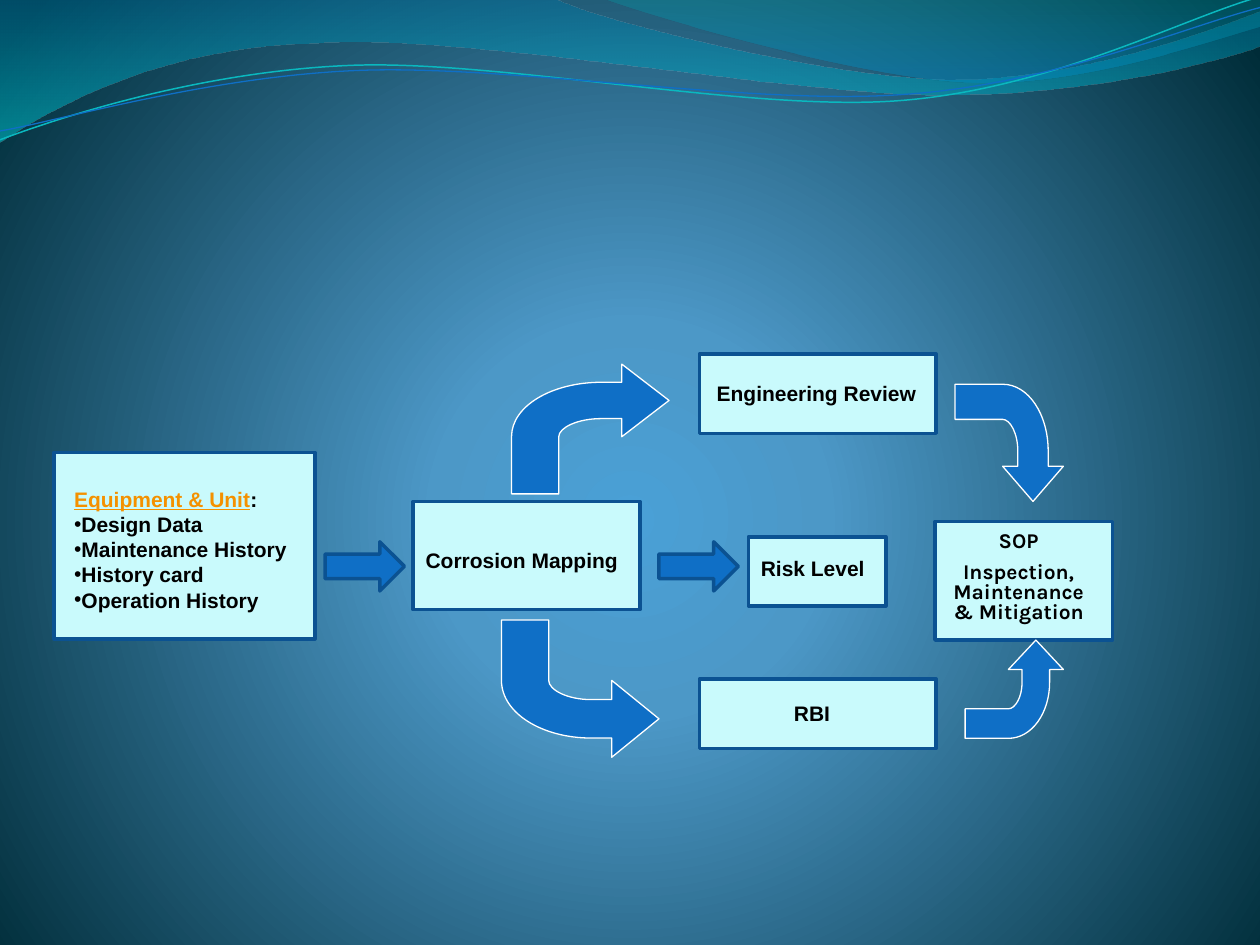
from lxml import etree
from pptx import Presentation
from pptx.dml.color import RGBColor
from pptx.enum.shapes import MSO_SHAPE as SHAPE
from pptx.enum.text import MSO_AUTO_SIZE, PP_ALIGN as ALIGN
from pptx.oxml import parse_xml
from pptx.oxml.ns import nsdecls, qn
from pptx.util import Inches, Pt

BLUE = RGBColor(0x0F, 0x6F, 0xC6)
NAVY = RGBColor(0x0B, 0x52, 0x92)
PALE = RGBColor(0xC9, 0xFA, 0xFC)
TEAL = RGBColor(0x0A, 0xB8, 0xBF)
ORANGE = RGBColor(0xF4, 0x91, 0x00)
BLACK = RGBColor(0, 0, 0)
WHITE = RGBColor(255, 255, 255)

# Gradient stops: position %, colour, opacity %
BACKDROP = [(0, "4AA0D6", 100), (25, "4C98C7", 100), (100, "002C38", 100)]
CENTRE = ('<a:path path="circle"><a:fillToRect l="10000" t="110000" '
          'r="10000" b="100000"/></a:path>')
DOWNWARD = '<a:lin ang="5400000" scaled="1"/>'

# Outlines: a start point, then lines (one point) and curves (three points)
WAVES = [
    ([[(0, 0)], [(4.4, -0.01)], [(4.76, 0.17), (6.64, 0.63), (7.58, 0.63)],
      [(8.53, 0.63), (9.58, 0.26), (10, 0.09)], [(10.01, 0.36)],
      [(9.83, 0.44), (8.7, 0.76), (7.46, 0.75)],
      [(6.22, 0.75), (3.82, 0.28), (2.57, 0.34)],
      [(1.29, 0.36), (0.46, 0.83), (-0.01, 1.13)]],
     [(0, "0074A1", 45), (100, "00C6CF", 55)]),
    ([[(4.79, -0.01)], [(5.09, 0.11), (6.82, 0.62), (7.69, 0.65)],
      [(8.56, 0.69), (9.61, 0.32), (10, 0.21)], [(10, 0)]],
     [(0, "00A1A9", 30), (80, "008BBF", 45)]),
]
RIPPLES = [
    ([[(0, 1.11)], [(0.48, 0.93), (1.58, 0.57), (2.77, 0.52)],
      [(3.95, 0.47), (5.93, 0.89), (7.13, 0.8)],
      [(8.33, 0.71), (9.38, 0.15), (9.98, -0.02)]], TEAL, 0.85),
    ([[(0, 1.04)], [(0.47, 0.96), (1.64, 0.61), (2.83, 0.56)],
      [(4.03, 0.51), (5.97, 0.84), (7.17, 0.75)],
      [(8.36, 0.67), (9.41, 0.21), (10, 0.06)]], BLUE, 0.75),
]
# Bent arrow in a unit square: (along the head's direction, across it)
BENT = [[(1, .72)], [(.7, 1)], [(.7, .86)], [(.57, .86)],
        [(.26, .86), (0, .68), (0, .44)], [(0, 0)], [(.3, 0)], [(.3, .44)],
        [(.3, .51), (.42, .58), (.57, .58)], [(.7, .58)], [(.7, .44)]]
# Start and end in x, start and end in y, and whether the head is vertical
BENT_ARROWS = [
    (7.66, 8.44, 5.86, 5.08, True),
    (3.98, 5.23, 4.92, 6.01, False),
    (4.06, 5.31, 3.92, 2.89, False),
    (7.58, 8.44, 3.05, 3.98, True),
]
BOXES = [
    (0.43, 3.59, 2.07, 1.48), (3.28, 3.98, 1.8, 0.86), (5.55, 2.81, 1.88, 0.63),
    (5.94, 4.26, 1.09, 0.55), (5.55, 5.39, 1.88, 0.55), (7.42, 4.14, 1.41, 0.94),
]
ARROWS = [(2.58, 4.3, 0.63, 0.39), (5.23, 4.3, 0.63, 0.39)]
INPUTS = ["Equipment & Unit:", "Design Data", "Maintenance History",
          "History card", "Operation History"]
LABELS = [
    ((0.49, 3.81, 1.95, 1.11), INPUTS, "Arial", ALIGN.LEFT),
    ((3.28, 4.3, 1.8, 0.3), ["Corrosion Mapping"], "Arial", ALIGN.LEFT),
    ((5.59, 2.97, 1.8, 0.3), ["Engineering Review"], "Arial", ALIGN.LEFT),
    ((5.94, 4.36, 1.09, 0.31), ["Risk Level"], "Arial", ALIGN.LEFT),
    ((5.86, 5.51, 1.17, 0.3), ["RBI"], "Arial", ALIGN.CENTER),
    ((7.42, 4.14, 1.33, 0.89), ["SOP", "Inspection, Maintenance & Mitigation"],
     "Karla", ALIGN.CENTER),
]


def set_gradient(fill, parent, stops, direction):
    gs = "".join(
        f'<a:gs pos="{pos * 1000}"><a:srgbClr val="{color}">'
        f'<a:alpha val="{alpha * 1000}"/></a:srgbClr></a:gs>'
        for pos, color, alpha in stops)
    fill.solid()
    parent.replace(parent.find(qn("a:solidFill")), parse_xml(
        f'<a:gradFill {nsdecls("a")} rotWithShape="1">'
        f'<a:gsLst>{gs}</a:gsLst>{direction}</a:gradFill>'))


def add_outline(s, outline, close=True):
    """Draw every point as a line, then join each group of three as a curve."""
    pts = [(Inches(x), Inches(y)) for seg in outline for x, y in seg]
    builder = s.shapes.build_freeform(*pts[0], scale=1.0)
    builder.add_line_segments(pts[1:], close=close)
    sp = builder.convert_to_shape()
    sp.shadow.inherit = False
    lines = iter(list(sp.element.iter(qn("a:lnTo"))))
    for seg in outline[1:]:
        first, *rest = [next(lines) for _ in seg]
        if rest:
            curve = etree.Element(qn("a:cubicBezTo"))
            first.addprevious(curve)
            for line in (first, *rest):
                curve.append(line[0])
                line.getparent().remove(line)
    return sp


def paint(sp, fill, line, width):
    sp.shadow.inherit = False
    sp.fill.solid()
    sp.fill.fore_color.rgb = fill
    sp.line.color.rgb = line
    sp.line.width = Pt(width)


def add_preset(s, kind, box, fill):
    paint(s.shapes.add_shape(kind, *map(Inches, box)), fill, NAVY, 2)


def style(r, font, color=BLACK):
    r.font.name, r.font.size, r.font.bold = font, Pt(12), True
    r.font.color.rgb = color


def add_label(s, box, lines, font, align):
    tf = s.shapes.add_textbox(*map(Inches, box)).text_frame
    tf.word_wrap = True
    tf.auto_size = MSO_AUTO_SIZE.SHAPE_TO_FIT_TEXT
    tf.text = "\n".join(lines)
    for p in tf.paragraphs:
        p.alignment = align
        for r in p.runs:
            style(r, font)
    return tf


prs = Presentation()
prs.slide_width, prs.slide_height = Inches(10), Inches(7.5)
s = prs.slides.add_slide(prs.slide_layouts[6])

# Background and waves
bg_fill = s.background.fill
bg_fill.solid()
set_gradient(bg_fill, next(s.element.iter(qn("p:bgPr"))), BACKDROP, CENTRE)
for outline, stops in WAVES:
    sp = add_outline(s, outline)
    set_gradient(sp.fill, sp.element.spPr, stops, DOWNWARD)
    sp.line.fill.background()
for outline, color, width in RIPPLES:
    sp = add_outline(s, outline, close=False)
    sp.fill.background()
    sp.line.color.rgb = color
    sp.line.width = Pt(width)

# Boxes and straight arrows
for box in BOXES:
    add_preset(s, SHAPE.RECTANGLE, box, PALE)
for box in ARROWS:
    add_preset(s, SHAPE.RIGHT_ARROW, box, BLUE)

# Labels
frames = [add_label(s, *label) for label in LABELS]

heading, *items = frames[0].paragraphs
heading.text = INPUTS[0].rstrip(":")
style(heading.runs[0], "Arial", ORANGE)
heading.runs[0].font.underline = True
colon = heading.add_run()
colon.text = ":"
style(colon, "Arial")
for p in items:
    pPr = p._p.get_or_add_pPr()
    etree.SubElement(pPr, qn("a:buFont")).set("typeface", "Arial")
    etree.SubElement(pPr, qn("a:buChar")).set("char", "•")

for p in frames[-1].paragraphs:
    p.space_before = Pt(6)
frames[-1].paragraphs[1].line_spacing = 0.8

# Bent arrows
for x0, x1, y0, y1, vertical in BENT_ARROWS:
    outline = [[(x0 + (x1 - x0) * (v if vertical else u),
                 y0 + (y1 - y0) * (u if vertical else v)) for u, v in seg]
               for seg in BENT]
    paint(add_outline(s, outline), BLUE, WHITE, 0.75)

prs.save("out.pptx")
